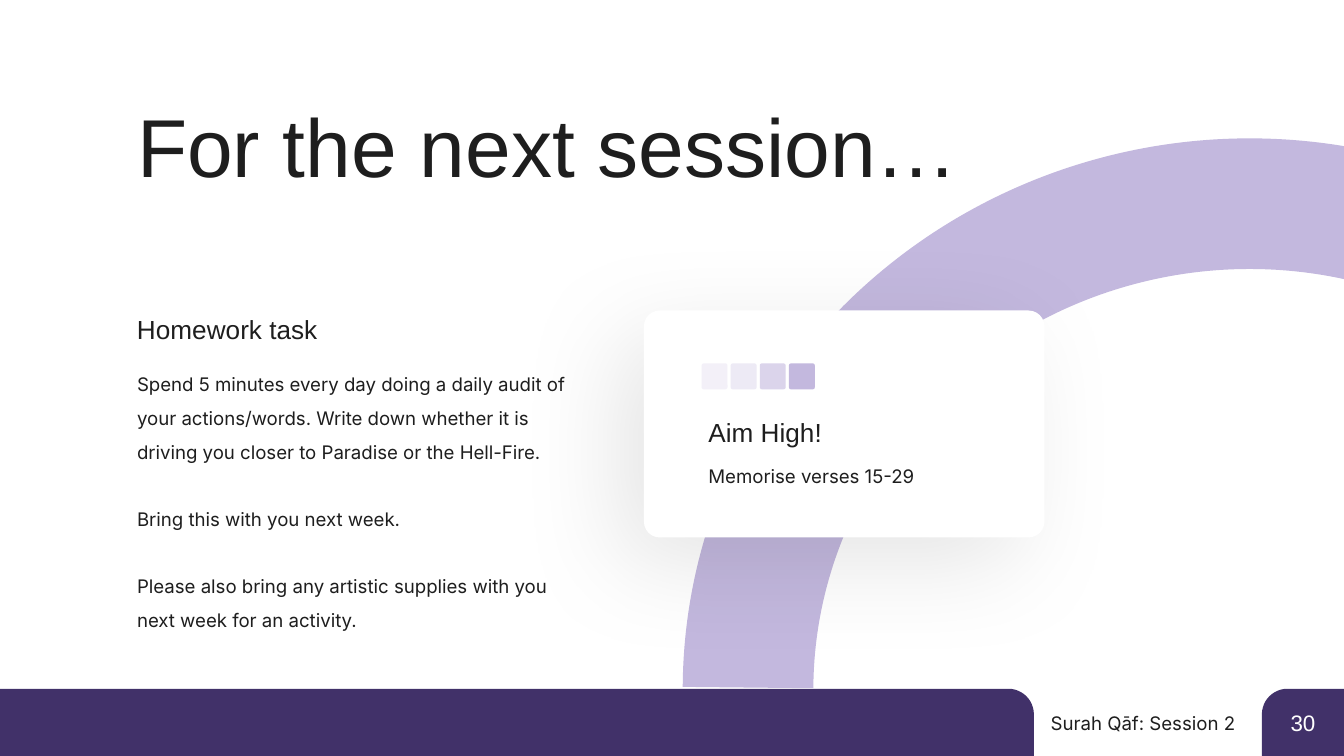
"""Build the homework slide with its arc, card and footer."""
import pptx
import pptx.dml.color
import pptx.enum.shapes
import pptx.enum.text
import pptx.oxml
import pptx.oxml.ns
import pptx.util

Cm, Pt = pptx.util.Cm, pptx.util.Pt
RGBColor = pptx.dml.color.RGBColor
KIND = pptx.enum.shapes.MSO_SHAPE
ALIGN = pptx.enum.text.PP_ALIGN
INK = RGBColor(0x1E, 0x1E, 0x1E)
WHITE = RGBColor(0xFF, 0xFF, 0xFF)
PLUM = RGBColor(0x41, 0x31, 0x69)
LILAC = RGBColor(0xC3, 0xB8, 0xDE)

TITLE = "For the next session…"
TASKS = [
    "Spend 5 minutes every day doing a daily audit of your actions/words. "
    "Write down whether it is driving you closer to Paradise or the Hell-Fire.",
    "Bring this with you next week.",
    "Please also bring any artistic supplies with you next week for an activity.",
]
HEAD = {"size": 14}
BODY = {"size": 10, "face": "Inter", "lead": 1.5}
LABELS = [
    (["Surah Qāf: Session 2"], (18.87, 13.39, 4.6, 0.56),
     {"size": 10, "face": "Inter", "align": ALIGN.RIGHT}),
    (["30"], (24.26, 13.34, 0.76, 0.64), {"size": 12, "ink": WHITE}),
    (["Homework task"], (2.46, 5.87, 8.59, 0.74), HEAD),
    (["Aim High!"], (13.26, 7.82, 5.05, 0.74), HEAD),
    (["Memorise verses 15-29"], (13.26, 8.51, 5.59, 0.56), BODY),
]
TINTS = [20, 29, 60, 100]
SIDE, STEP = 0.49, 0.55


def place(item, box):
    item.left, item.top, item.width, item.height = map(Cm, box)


def write(item, lines, box, size=10, face="Arial", ink=INK, lead=None,
          align=ALIGN.LEFT, gap=0):
    place(item, box)
    frame = item.text_frame
    frame.word_wrap = True
    frame.auto_size = pptx.enum.text.MSO_AUTO_SIZE.SHAPE_TO_FIT_TEXT
    frame.vertical_anchor = pptx.enum.text.MSO_ANCHOR.TOP
    frame.margin_left = frame.margin_right = Cm(0.13)
    frame.margin_top = frame.margin_bottom = Cm(0.06)
    for i, line in enumerate(lines):
        para = frame.paragraphs[0] if i == 0 else frame.add_paragraph()
        para.text = line
        para.alignment = align
        para.space_before = Pt(gap if i else 0)
        if lead:
            para.line_spacing = lead
        if item.is_placeholder:
            props = para._p.get_or_add_pPr()
            props.set("marL", "0")
            props.set("indent", "0")
            pptx.oxml.ns.qn("a:buNone")
            props.append(pptx.oxml.parse_xml(
                f'<a:buNone {pptx.oxml.ns.nsdecls("a")}/>'))
        font = para.runs[0].font
        font.size, font.name = Pt(size), face
        font.color.rgb = ink


def draw(slide, kind, box, fill=None, adj=()):
    item = slide.shapes.add_shape(kind, *map(Cm, box))
    item.shadow.inherit = False
    for i, value in enumerate(adj):
        item.adjustments[i] = value
    if fill is None:
        item.fill.background()
    else:
        item.fill.solid()
        item.fill.fore_color.rgb = fill
    item.line.fill.background()
    return item


def fade(item, alpha):
    tone = item._element.spPr.find(".//" + pptx.oxml.ns.qn("a:srgbClr"))
    tone.append(pptx.oxml.parse_xml(
        f'<a:alpha {pptx.oxml.ns.nsdecls("a")} val="{alpha * 1000}"/>'))


def shade(item, alpha, blur, dist, angle):
    effects = item._element.spPr.find(pptx.oxml.ns.qn("a:effectLst"))
    effects.append(pptx.oxml.parse_xml(
        f'<a:outerShdw {pptx.oxml.ns.nsdecls("a")} blurRad="{Pt(blur)}" '
        f'dist="{Pt(dist)}" dir="{angle * 60000}" algn="ctr" rotWithShape="0">'
        f'<a:srgbClr val="000000"><a:alpha val="{alpha * 1000}"/>'
        '</a:srgbClr></a:outerShdw>'))


def main():
    deck = pptx.Presentation()
    deck.slide_width, deck.slide_height = Cm(25.4), Cm(14.29)
    slide = deck.slides.add_slide(deck.slide_layouts[1])
    title, body = slide.placeholders

    tab = draw(slide, KIND.ROUND_1_RECTANGLE, (23.85, 13.02, 1.55, 1.27), PLUM, [0.38])
    tab._element.spPr.xfrm.set("flipH", "1")
    draw(slide, KIND.ROUND_1_RECTANGLE, (0, 13.02, 19.54, 1.27), PLUM, [0.38])
    arc = draw(slide, KIND.ARC, (14.13, 3.86, 18.77, 18.16), adj=[113.67, 6.76])
    arc.rotation = 350.2
    arc.line.color.rgb = LILAC
    arc.line.width = Pt(70)

    card = draw(slide, KIND.ROUNDED_RECTANGLE, (12.17, 5.87, 7.57, 4.29), WHITE, [0.07])
    shade(card, alpha=9, blur=55.9, dist=20, angle=135)
    for i, tint in enumerate(TINTS):
        box = (13.26 + i * STEP, 6.87, SIDE, SIDE)
        fade(draw(slide, KIND.ROUNDED_RECTANGLE, box, LILAC, [0.08]), tint)

    write(title, [TITLE], (2.46, 1.75, 20.32, 2.01), size=44)
    write(body, TASKS, (2.46, 6.78, 8.64, 5.05), gap=18, **BODY)
    for lines, box, look in LABELS:
        label = slide.shapes.add_textbox(*map(Cm, box))
        write(label, lines, box, **look)
    for item in (title, body):
        slide.shapes._spTree.append(item._element)
    deck.save("out.pptx")


if __name__ == "__main__":
    main()
